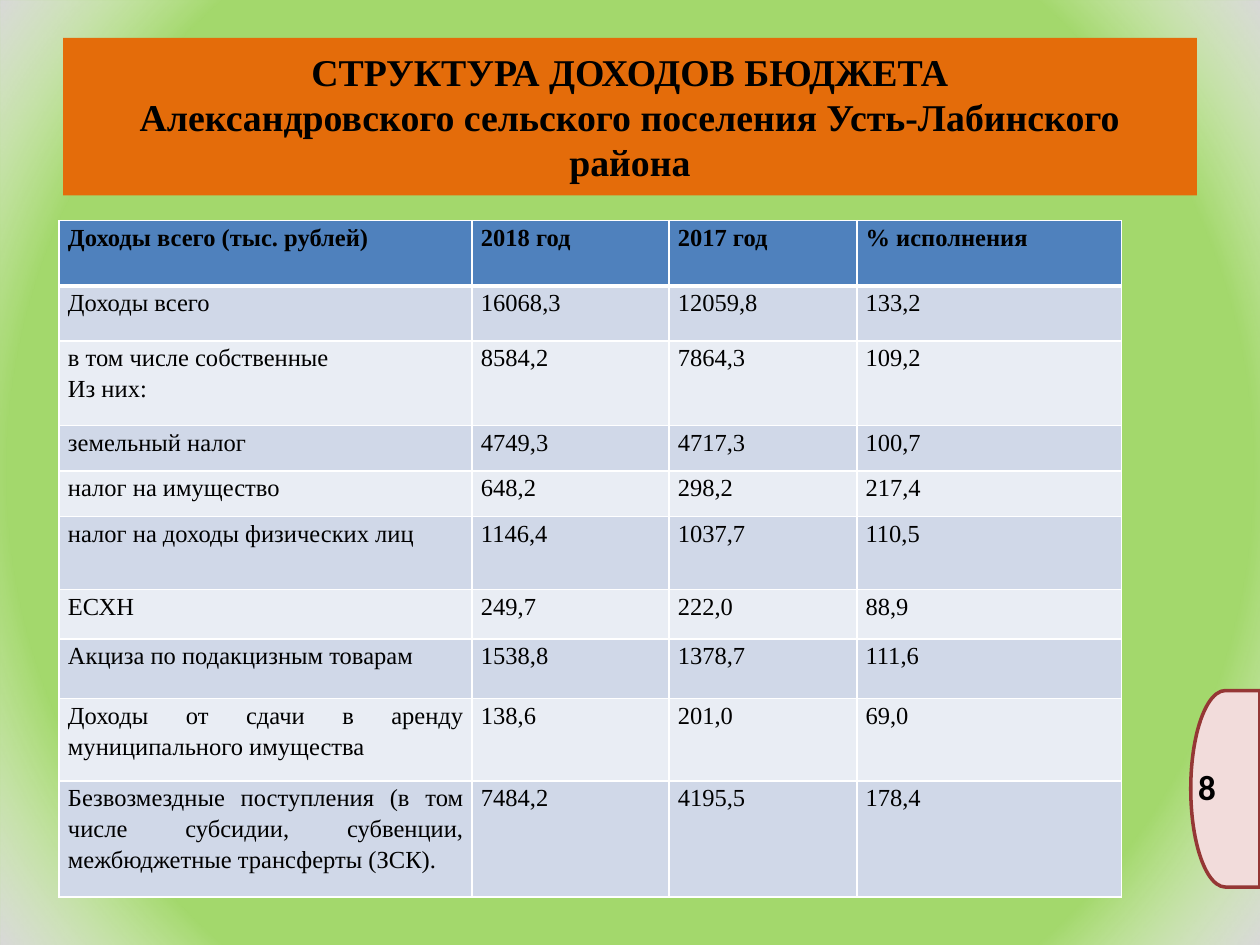
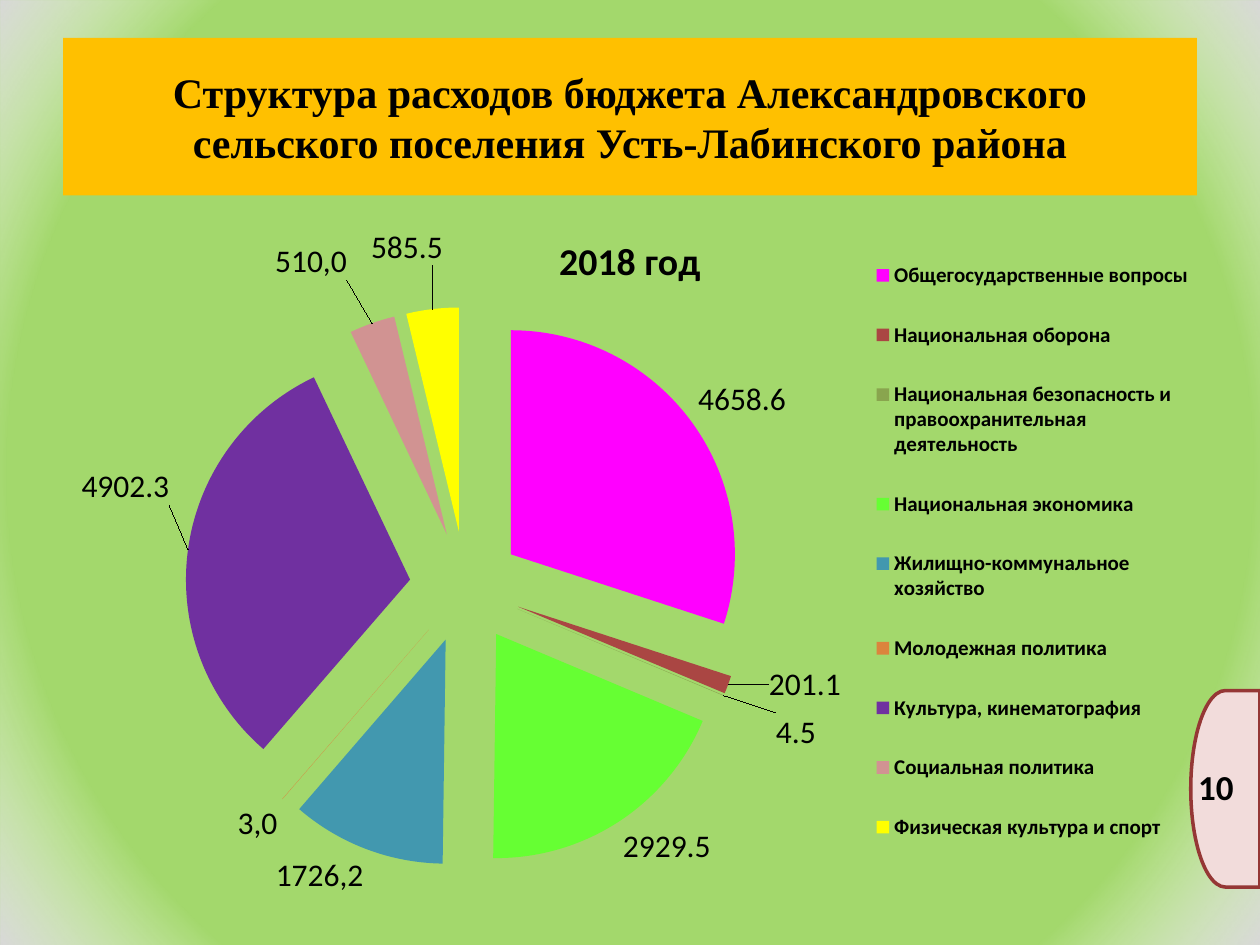
import pptx
import pptx.chart.data
import pptx.dml.color
import pptx.enum.chart
import pptx.enum.shapes
import pptx.enum.text
import pptx.oxml
import pptx.oxml.ns
import pptx.util

Pt = pptx.util.Pt
qn = pptx.oxml.ns.qn
SHAPES = pptx.enum.shapes.MSO_SHAPE
ALIGN = pptx.enum.text.PP_ALIGN
NS_A = pptx.oxml.ns.nsdecls("a")
NS_C = pptx.oxml.ns.nsdecls("c")

# Shared look
SERIF, SANS = "Times New Roman", "Calibri"
BLACK, WHITE = "000000", "FFFFFF"
BACKGROUND = "A3D86C"
SLIDE_BOX = (0, 0, 720, 540)
TITLE_BOX = (36, 21.6, 648, 90)
TAB_BOX = (680.4, 394.56, 39.6, 112.32)

# Income table
INCOME_BOX = (33.84, 126, 607.2, 386.64)
INCOME_COLUMNS = (236, 112.5, 107.3, 151.4)
INCOME_ROWS = (37.4, 31.5, 48.2, 26, 26, 41.8, 28.4, 33.8, 47.2, 66.3)
HEADER_FILL, ROW_FILLS = "4F81BD", ("D0D8E8", "E9EDF4")
INCOME = [
    ("Доходы всего (тыс. рублей)", "2018 год", "2017 год", "% исполнения"),
    ("Доходы всего", "16068,3", "12059,8", "133,2"),
    ("в том числе собственные\nИз них:", "8584,2", "7864,3", "109,2"),
    ("земельный налог", "4749,3", "4717,3", "100,7"),
    ("налог на имущество", "648,2", "298,2", "217,4"),
    ("налог на доходы физических лиц", "1146,4", "1037,7", "110,5"),
    ("ЕСХН", "249,7", "222,0", "88,9"),
    ("Акциза по подакцизным товарам", "1538,8", "1378,7", "111,6"),
    ("Доходы от сдачи в аренду муниципального имущества", "138,6", "201,0", "69,0"),
    ("Безвозмездные поступления (в том числе субсидии, субвенции, "
     "межбюджетные трансферты (ЗСК).", "7484,2", "4195,5", "178,4"),
]

# Spending chart: category, value, colour
SPENDING_BOX = (36, 118.08, 648, 410.4)
SPENDING = [
    ("Общегосударственные вопросы", 4658.6, "FF00FF"),
    ("Национальная оборона", 201.1, "AA4643"),
    ("Национальная безопасность и правоохранительная деятельность", 4.5, "89A54E"),
    ("Национальная экономика", 2929.5, "66FF33"),
    ("Жилищно-коммунальное хозяйство", 1726.2, "4298AF"),
    ("Молодежная политика", 3, "DB843D"),
    ("Культура, кинематография", 4902.3, "7030A0"),
    ("Социальная политика", 510, "D19392"),
    ("Физическая культура и спорт", 585.5, "FFFF00"),
]
TYPED_LABELS = {4: "1726,2", 5: "3,0", 7: "510,0"}
LABEL_SHIFTS = {1: (0.03, -0.03), 2: (0.04, 0.02), 6: (-0.01, -0.06),
                7: (-0.02, -0.05), 8: (0.01, -0.05)}


def rgb(hex_code):
    return pptx.dml.color.RGBColor.from_string(hex_code)


def points(lengths):
    return [Pt(length) for length in lengths]


def paint(fill, hex_code):
    fill.solid()
    fill.fore_color.rgb = rgb(hex_code)


def style(font, size, name, bold=False):
    font.size, font.name, font.bold = Pt(size), name, bold
    font.color.rgb = rgb(BLACK)


def add_run(paragraph, text, size, name, bold=False):
    run = paragraph.add_run()
    run.text = text
    style(run.font, size, name, bold)


def add_master_backdrop(master, slide):
    """Green ground with a pale glow in the corners, moved to the master."""
    paint(master.background.fill, BACKGROUND)
    glow = slide.shapes.add_shape(SHAPES.RECTANGLE, *points(SLIDE_BOX))
    glow.shadow.inherit = False
    glow.line.fill.background()
    gradient = pptx.oxml.parse_xml(
        f'<a:gradFill {NS_A} rotWithShape="1"><a:gsLst>'
        '<a:gs pos="79000"><a:srgbClr val="FFFFFF"><a:alpha val="0"/></a:srgbClr></a:gs>'
        '<a:gs pos="100000"><a:srgbClr val="D9D9D9"/></a:gs></a:gsLst>'
        '<a:path path="circle"><a:fillToRect l="50000" t="50000" r="50000" b="50000"/>'
        '</a:path></a:gradFill>')
    glow.element.spPr.find(qn("a:prstGeom")).addnext(gradient)
    master.shapes.element.insert(2, glow.element)


def add_title(slide, box, lines, size, fill):
    title = slide.shapes.title
    title.left, title.top, title.width, title.height = points(box)
    paint(title.fill, fill)
    frame = title.text_frame
    frame.auto_size = pptx.enum.text.MSO_AUTO_SIZE.NONE
    frame.vertical_anchor = pptx.enum.text.MSO_ANCHOR.MIDDLE
    paragraph = frame.paragraphs[0]
    paragraph.alignment = ALIGN.CENTER
    for index, line in enumerate(lines):
        if index:
            paragraph.add_line_break()
        add_run(paragraph, line, size, SERIF, True)


def add_page_tab(slide, box, number):
    left, top, width, height = box
    group = slide.shapes.add_group_shape()
    tab = group.shapes.add_shape(SHAPES.FLOWCHART_DELAY, *points(box))
    tab.rotation = 180
    tab.shadow.inherit = False
    paint(tab.fill, "F2DCDB")
    tab.line.color.rgb = rgb("953735")
    tab.line.width = Pt(2)
    label = group.shapes.add_textbox(*points((left - 2.9, top + 39.6, width + 2.2, 31.7)))
    label.text_frame.word_wrap = True
    add_run(label.text_frame.paragraphs[0], number, 20, SANS, True)


def set_borders(cell, bottom_width):
    properties = cell._tc.get_or_add_tcPr()
    widths = {"lnL": 1, "lnR": 1, "lnT": 1, "lnB": bottom_width}
    for position, (side, width) in enumerate(widths.items()):
        properties.insert(position, pptx.oxml.parse_xml(
            f'<a:{side} {NS_A} w="{Pt(width)}"><a:solidFill>'
            f'<a:srgbClr val="{WHITE}"/></a:solidFill></a:{side}>'))


def fill_cell(cell, text, fill, header):
    paint(cell.fill, fill)
    set_borders(cell, 3 if header else 1)
    cell.margin_left = cell.margin_right = Pt(5)
    cell.margin_top = cell.margin_bottom = 0
    for index, line in enumerate(text.split("\n")):
        frame = cell.text_frame
        paragraph = frame.add_paragraph() if index else frame.paragraphs[0]
        paragraph.alignment = ALIGN.JUSTIFY
        paragraph.line_spacing = 1.15
        add_run(paragraph, line, 14, SERIF, header)


def add_income_table(slide, box):
    table = slide.shapes.add_table(len(INCOME), len(INCOME[0]), *points(box)).table
    for column, width in zip(table.columns, INCOME_COLUMNS):
        column.width = Pt(width)
    for row_index, (row, height) in enumerate(zip(table.rows, INCOME_ROWS)):
        row.height = Pt(height)
        header = row_index == 0
        fill = HEADER_FILL if header else ROW_FILLS[(row_index - 1) % 2]
        for cell, text in zip(row.cells, INCOME[row_index]):
            fill_cell(cell, text, fill, header)


def manual_layout(x, y, size=None, inner=False):
    target = '<c:layoutTarget val="inner"/>' if inner else ""
    modes, extent = "", ""
    if size:
        modes = '<c:xMode val="edge"/><c:yMode val="edge"/>'
        extent = f'<c:w val="{size[0]}"/><c:h val="{size[1]}"/>'
    return pptx.oxml.parse_xml(
        f'<c:layout {NS_C}><c:manualLayout>{target}{modes}'
        f'<c:x val="{x}"/><c:y val="{y}"/>{extent}</c:manualLayout></c:layout>')


def label_slices(plot, series):
    outside = pptx.enum.chart.XL_LABEL_POSITION.OUTSIDE_END
    for index in sorted(TYPED_LABELS.keys() | LABEL_SHIFTS.keys()):
        label = series.points[index].data_label
        if index in TYPED_LABELS:
            add_run(label.text_frame.paragraphs[0], TYPED_LABELS[index], 18, SANS)
        label.position = outside
    labels = series.data_labels
    labels.show_value = True
    labels.position = outside
    style(labels.font, 18, SANS)
    # Leader lines join the shifted labels to their slices
    element = labels._element
    for leader in element.findall(qn("c:showLeaderLines")):
        element.remove(leader)
    element.append(pptx.oxml.parse_xml(f'<c:showLeaderLines {NS_C} val="1"/>'))
    for label in element.findall(qn("c:dLbl")):
        index_element = label.find(qn("c:idx"))
        shift = LABEL_SHIFTS.get(int(index_element.get("val")))
        if shift:
            index_element.addnext(manual_layout(*shift))


def add_spending_chart(slide, box):
    data = pptx.chart.data.CategoryChartData()
    data.categories = [category for category, _, _ in SPENDING]
    data.add_series("Series 1", [value for _, value, _ in SPENDING])
    chart = slide.shapes.add_chart(
        pptx.enum.chart.XL_CHART_TYPE.PIE, *points(box), data).chart
    style(chart.font, 18, SANS)

    chart.has_title = True
    add_run(chart.chart_title.text_frame.paragraphs[0], "2018 год", 21.6, SANS, True)
    chart.chart_title.include_in_layout = False

    chart.has_legend = True
    legend = chart.legend
    legend.position = pptx.enum.chart.XL_LEGEND_POSITION.RIGHT
    legend.include_in_layout = False
    style(legend.font, 12, SANS, True)
    legend_element = chart.element.find(".//" + qn("c:legend"))
    legend_element.find(qn("c:legendPos")).addnext(
        manual_layout(0.71, 0.03, (0.29, 0.9)))

    plot_area = chart.element.find(".//" + qn("c:plotArea"))
    for layout in plot_area.findall(qn("c:layout")):
        plot_area.remove(layout)
    plot_area.insert(0, manual_layout(0.06, 0.14, (0.59, 0.78), True))

    plot = chart.plots[0]
    plot.vary_by_categories = True
    series = plot.series[0]
    for index, (_, _, colour) in enumerate(SPENDING):
        paint(series.points[index].format.fill, colour)
    label_slices(plot, series)
    first_point = series._element.find(qn("c:dPt"))
    first_point.addprevious(pptx.oxml.parse_xml(f'<c:explosion {NS_C} val="25"/>'))
    for point in series._element.findall(qn("c:dPt")):
        point.find(qn("c:spPr")).addprevious(
            pptx.oxml.parse_xml(f'<c:explosion {NS_C} val="25"/>'))


def main():
    deck = pptx.Presentation()
    deck.slide_width, deck.slide_height = points(SLIDE_BOX[2:])
    title_only = deck.slide_layouts[5]

    # Income structure
    income = deck.slides.add_slide(title_only)
    add_master_backdrop(deck.slide_master, income)
    add_title(income, TITLE_BOX,
              ["СТРУКТУРА ДОХОДОВ БЮДЖЕТА",
               "Александровского сельского поселения Усть-Лабинского района"],
              21.6, "E46C0A")
    add_page_tab(income, TAB_BOX, "8")
    add_income_table(income, INCOME_BOX)

    # Spending structure
    spending = deck.slides.add_slide(title_only)
    add_title(spending, TITLE_BOX,
              ["Структура расходов бюджета Александровского сельского поселения "
               "Усть-Лабинского района"], 24, "FFC000")
    add_spending_chart(spending, SPENDING_BOX)
    add_page_tab(spending, TAB_BOX, "10")

    deck.save("out.pptx")


if __name__ == "__main__":
    main()
